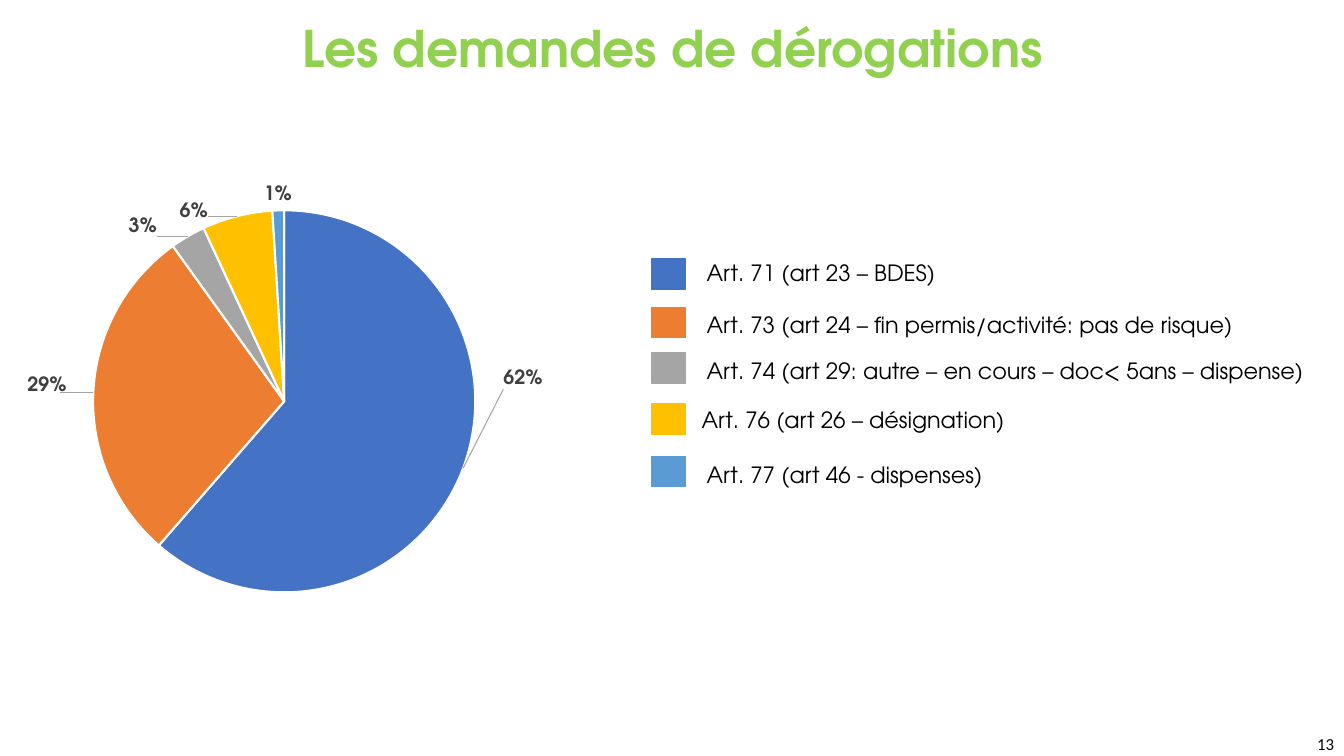
from lxml import etree
from pptx import Presentation
from pptx.chart.data import CategoryChartData
from pptx.dml.color import RGBColor
from pptx.enum.chart import XL_CHART_TYPE, XL_LABEL_POSITION
from pptx.enum.shapes import MSO_SHAPE
from pptx.enum.text import MSO_ANCHOR, PP_ALIGN
from pptx.oxml import parse_xml
from pptx.oxml.ns import nsdecls, qn
from pptx.util import Inches, Pt

PIE = XL_CHART_TYPE.PIE
OUTSIDE = XL_LABEL_POSITION.OUTSIDE_END
RECTANGLE = MSO_SHAPE.RECTANGLE
MIDDLE = MSO_ANCHOR.MIDDLE
CENTER, LEFT, RIGHT = PP_ALIGN.CENTER, PP_ALIGN.LEFT, PP_ALIGN.RIGHT

GREEN = RGBColor(0x92, 0xD0, 0x50)
BLACK = RGBColor(0x00, 0x00, 0x00)
WHITE = RGBColor(0xFF, 0xFF, 0xFF)
DARK_GREY = RGBColor(0x40, 0x40, 0x40)
BLUE = RGBColor(0x44, 0x72, 0xC4)
ORANGE = RGBColor(0xED, 0x7D, 0x31)
GREY = RGBColor(0xA5, 0xA5, 0xA5)
YELLOW = RGBColor(0xFF, 0xC0, 0x00)
LIGHT_BLUE = RGBColor(0x5B, 0x9B, 0xD5)

HEADING_FONT = "TeX Gyre Adventor"
BODY_FONT = "Calibri"

SHARES = [0.62, 0.29, 0.03, 0.06, 0.01]
SLICE_COLOURS = [BLUE, ORANGE, GREY, YELLOW, LIGHT_BLUE]
LABEL_OFFSETS = [(0.05, -0.17), (-0.04, -0.01), (-0.04, 0.01), (-0.04, 0.02)]
LEGEND = [
    ("Art. 71 (art 23 – BDES)", 2.57, 6.91, 2.52, 2.48),
    ("Art. 73 (art 24 – fin permis/activité: pas de risque)", 3.05, 6.91, 3.04, 5.46),
    ("Art. 74 (art 29: autre – en cours – doc< 5ans – dispense)", 3.5, 6.91, 3.49, 6.15),
    ("Art. 76 (art 26 – désignation)", 4.01, 6.86, 3.98, 3.23),
    ("Art. 77 (art 46 - dispenses)", 4.53, 6.91, 4.53, 2.96),
]


def style_font(font, name, size, colour, bold=False):
    font.name = name
    font.size = Pt(size)
    font.bold = bold
    font.color.rgb = colour


def write(box, text, name, size, colour, align=LEFT, bold=False):
    para = box.text_frame.paragraphs[0]
    para.alignment = align
    span = para.add_run()
    span.text = text
    style_font(span.font, name, size, colour, bold)
    return para


def add_title(page):
    title = page.shapes.title
    title.left, title.top = Inches(0.92), Inches(0.04)
    title.width, title.height = Inches(11.5), Inches(0.93)
    title.text_frame.vertical_anchor = MIDDLE
    para = write(title, "Les demandes de dérogations", HEADING_FONT, 36, GREEN, CENTER, True)
    para.line_spacing = 0.9


def add_page_number(page):
    box = page.shapes.add_textbox(Inches(10.33), Inches(7.23), Inches(3), Inches(0.3))
    box.text_frame.word_wrap = True
    box.text_frame.vertical_anchor = MIDDLE
    write(box, "13", BODY_FONT, 12, BLACK, RIGHT)


def manual_layout(**values):
    layout = parse_xml(f"<c:layout {nsdecls('c')}><c:manualLayout/></c:layout>")
    for tag, value in values.items():
        etree.SubElement(layout[0], qn(f"c:{tag}")).set("val", str(value))
    return layout


def style_labels(series):
    labels = series.data_labels
    labels.show_value = True
    labels.number_format = "0%"
    labels.number_format_is_linked = False
    labels.position = OUTSIDE
    style_font(labels.font, HEADING_FONT, 14, DARK_GREY, True)
    for index, (x, y) in enumerate(LABEL_OFFSETS):
        label = series.points[index].data_label
        style_font(label.font, HEADING_FONT, 14, DARK_GREY, True)
        label.position = OUTSIDE
    tree = labels._element
    for entry, (x, y) in zip(tree.findall(qn("c:dLbl")), LABEL_OFFSETS):
        entry.insert(1, manual_layout(x=x, y=y))
    if tree.find(qn("c:showLeaderLines")) is None:
        etree.SubElement(tree, qn("c:showLeaderLines"))
    tree.find(qn("c:showLeaderLines")).set("val", "1")
    tree.append(parse_xml(
        f"<c:leaderLines {nsdecls('c', 'a')}><c:spPr><a:ln w='9525'><a:solidFill>"
        f"<a:srgbClr val='{GREY}'/></a:solidFill></a:ln></c:spPr></c:leaderLines>"))


def add_pie(page):
    data = CategoryChartData(number_format="0%")
    data.categories = ["1", "2", "3", "4", "5"]
    data.add_series("Series 1", SHARES)
    chart = page.shapes.add_chart(
        PIE, Inches(0.27), Inches(1.45), Inches(6.87), Inches(5.84), data).chart
    chart.has_title = False
    chart.has_legend = False
    style_font(chart.font, BODY_FONT, 10, BLACK)
    plot = chart.plots[0]
    plot.vary_by_categories = True
    series = plot.series[0]
    for index, colour in enumerate(SLICE_COLOURS):
        slice_format = series.points[index].format
        slice_format.fill.solid()
        slice_format.fill.fore_color.rgb = colour
        slice_format.line.color.rgb = WHITE
        slice_format.line.width = Pt(1.5)
    style_labels(series)
    area = chart._chartSpace.chart.plotArea
    for layout in area.findall(qn("c:layout")):
        area.remove(layout)
    area.insert(0, manual_layout(layoutTarget="inner", xMode="edge", yMode="edge",
                                 x=0.095, y=0.109, w=0.552, h=0.649))


def add_legend_entry(group, colour, text, swatch_top, left, top, width):
    swatch = group.shapes.add_shape(
        RECTANGLE, Inches(6.46), Inches(swatch_top), Inches(0.34), Inches(0.3))
    swatch.shadow.inherit = False
    swatch.fill.solid()
    swatch.fill.fore_color.rgb = colour
    swatch.line.color.rgb = colour
    swatch.line.width = Pt(1)
    box = group.shapes.add_textbox(Inches(left), Inches(top), Inches(width), Inches(0.37))
    box.text_frame.word_wrap = False
    write(box, text, HEADING_FONT, 16, BLACK)


def main():
    deck = Presentation()
    deck.slide_width, deck.slide_height = Inches(13.33), Inches(7.5)
    page = deck.slides.add_slide(deck.slide_layouts[5])
    add_title(page)
    add_page_number(page)
    add_pie(page)
    legend = page.shapes.add_group_shape()
    for colour, entry in zip(SLICE_COLOURS, LEGEND):
        add_legend_entry(legend, colour, *entry)
    deck.save("out.pptx")


if __name__ == "__main__":
    main()
